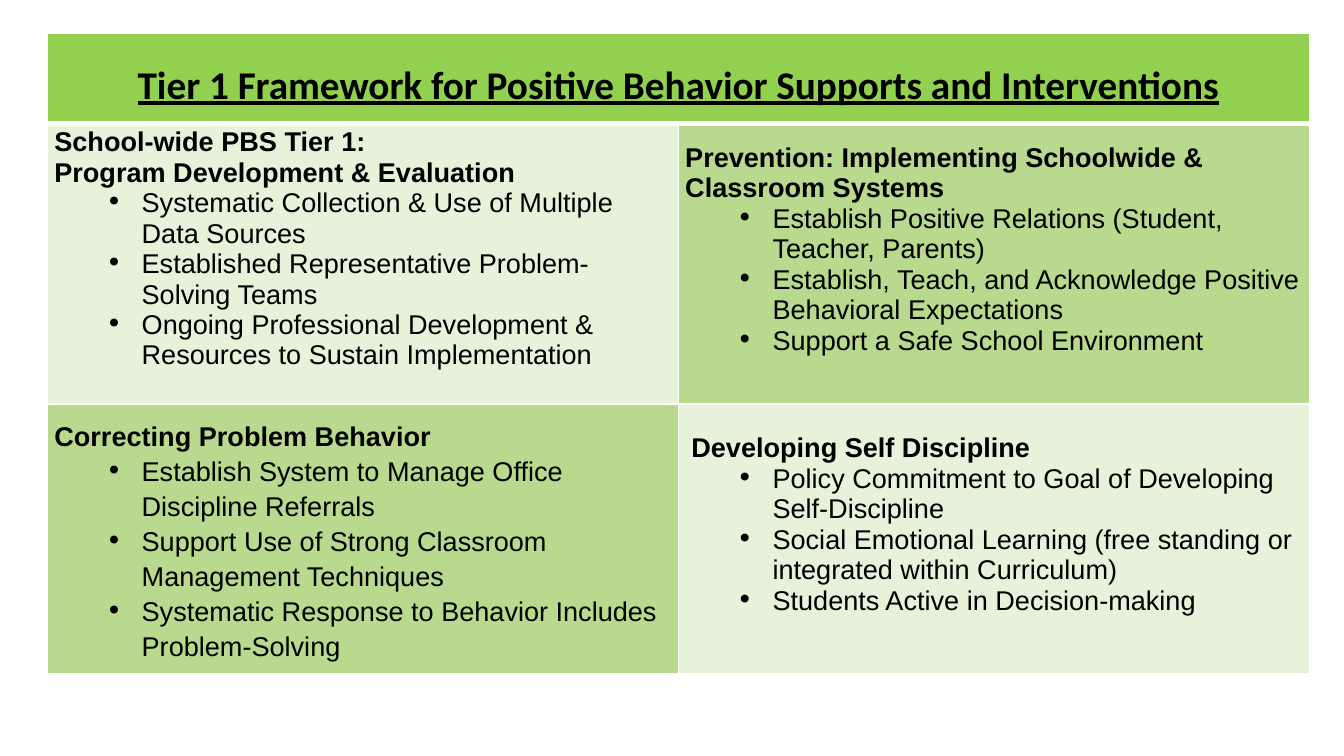
from dataclasses import dataclass

from lxml.etree import SubElement
from pptx import Presentation
from pptx.dml.color import RGBColor
from pptx.enum.text import MSO_ANCHOR, PP_ALIGN
from pptx.oxml.ns import qn
from pptx.util import Pt


@dataclass(frozen=True)
class Theme:
    banner: str = "92D050"
    pale: str = "E6F2D9"
    mid: str = "B8D98E"
    ink: str = "000000"
    border: str = "FFFFFF"
    title_font: str = "Calibri"
    body_font: str = "Arial"
    title_size: float = 21
    body_size: float = 14.5
    loose: float = 1.15


@dataclass(frozen=True)
class Quadrant:
    headings: tuple
    points: tuple
    spacing: float = 1.0
    bottom: float = 0
    heading_indent: float = 0


QUADRANTS = (
    (
        Quadrant(
            ("School-wide PBS Tier 1:", "Program Development & Evaluation"),
            ("Systematic Collection & Use of Multiple Data Sources",
             "Established Representative Problem-Solving Teams",
             "Ongoing Professional Development & Resources to Sustain Implementation"),
            bottom=16.5,
        ),
        Quadrant(
            ("Prevention: Implementing Schoolwide &", "Classroom Systems"),
            ("Establish Positive Relations (Student, Teacher, Parents)",
             "Establish, Teach, and Acknowledge Positive Behavioral Expectations",
             "Support a Safe School Environment"),
            bottom=16,
        ),
    ),
    (
        Quadrant(
            ("Correcting Problem Behavior",),
            ("Establish System to Manage Office Discipline Referrals",
             "Support Use of Strong Classroom Management Techniques",
             "Systematic Response to Behavior Includes Problem-Solving"),
            spacing=Theme.loose,
        ),
        Quadrant(
            ("Developing Self Discipline",),
            ("Policy Commitment to Goal of Developing Self-Discipline",
             "Social Emotional Learning (free standing or integrated within Curriculum)",
             "Students Active in Decision-making"),
            bottom=16,
            heading_indent=3.3,
        ),
    ),
)


class SlideBuilder:
    def __init__(self, slide, theme):
        self.slide = slide
        self.theme = theme

    def table(self, left, top, column_widths, row_heights):
        table = self.slide.shapes.add_table(
            len(row_heights), len(column_widths), Pt(left), Pt(top),
            Pt(sum(column_widths)), Pt(sum(row_heights))).table
        table.first_row = table.horz_banding = False
        for column, width in zip(table.columns, column_widths):
            column.width = Pt(width)
        for row, height in zip(table.rows, row_heights):
            row.height = Pt(height)
        return table

    def style_cell(self, cell, fill, top=0.7, bottom=0, bottom_border=1):
        cell.margin_left = cell.margin_right = Pt(3.6)
        cell.margin_top, cell.margin_bottom = Pt(top), Pt(bottom)
        properties = cell._tc.get_or_add_tcPr()
        for side, width in (("L", 1), ("R", 1), ("T", 1), ("B", bottom_border)):
            line = SubElement(properties, qn(f"a:ln{side}"), w=str(Pt(width)))
            solid = SubElement(line, qn("a:solidFill"))
            SubElement(solid, qn("a:srgbClr"), val=self.theme.border)
        cell.fill.solid()
        cell.fill.fore_color.rgb = RGBColor.from_string(fill)

    def paragraph(self, frame, text, spacing, font, size, bold=False):
        """Fill the empty first paragraph, or add one after the others."""
        first = frame.paragraphs[0]
        paragraph = frame.add_paragraph() if first.runs else first
        paragraph.text = text
        paragraph.line_spacing = spacing
        paragraph.font.name = font
        paragraph.font.size = Pt(size)
        paragraph.font.bold = bold
        paragraph.font.color.rgb = RGBColor.from_string(self.theme.ink)
        return paragraph

    def indent(self, paragraph, left, first_line=0):
        properties = paragraph._p.get_or_add_pPr()
        properties.set("marL", str(Pt(left)))
        properties.set("indent", str(Pt(first_line)))
        return properties

    def bullet(self, paragraph):
        paragraph.level = 1
        properties = self.indent(paragraph, 46.8, -19.4)
        color = SubElement(properties, qn("a:buClr"))
        SubElement(color, qn("a:srgbClr"), val=self.theme.ink)
        SubElement(properties, qn("a:buChar"), char="∙")

    def banner(self, table, title):
        theme = self.theme
        heading = table.cell(0, 0)
        heading.merge(table.cell(0, 1))
        for cell in (heading, table.cell(0, 1)):
            self.style_cell(cell, theme.banner, top=11.3, bottom_border=3)
        paragraph = self.paragraph(heading.text_frame, title, theme.loose,
                                   theme.title_font, theme.title_size, bold=True)
        paragraph.alignment = PP_ALIGN.CENTER
        paragraph.font.underline = True

    def quadrant(self, cell, content, fill):
        theme = self.theme
        self.style_cell(cell, fill, bottom=content.bottom)
        cell.vertical_anchor = MSO_ANCHOR.MIDDLE
        body = (content.spacing, theme.body_font, theme.body_size)
        for text in content.headings:
            heading = self.paragraph(cell.text_frame, text, *body, bold=True)
            self.indent(heading, content.heading_indent)
        for text in content.points:
            self.bullet(self.paragraph(cell.text_frame, text, *body))


def main():
    presentation = Presentation()
    presentation.slide_width, presentation.slide_height = Pt(720), Pt(405)
    slide = presentation.slides.add_slide(presentation.slide_layouts[6])
    theme = Theme()
    builder = SlideBuilder(slide, theme)

    framework = builder.table(25.5, 18, (338, 338), (48, 150.5, 144.5))
    builder.banner(framework, "Tier 1 Framework for Positive Behavior Supports and Interventions")
    for row, quadrants in enumerate(QUADRANTS):
        for column, content in enumerate(quadrants):
            fill = theme.mid if (row + column) % 2 else theme.pale
            builder.quadrant(framework.cell(row + 1, column), content, fill)

    presentation.save("out.pptx")


if __name__ == "__main__":
    main()
